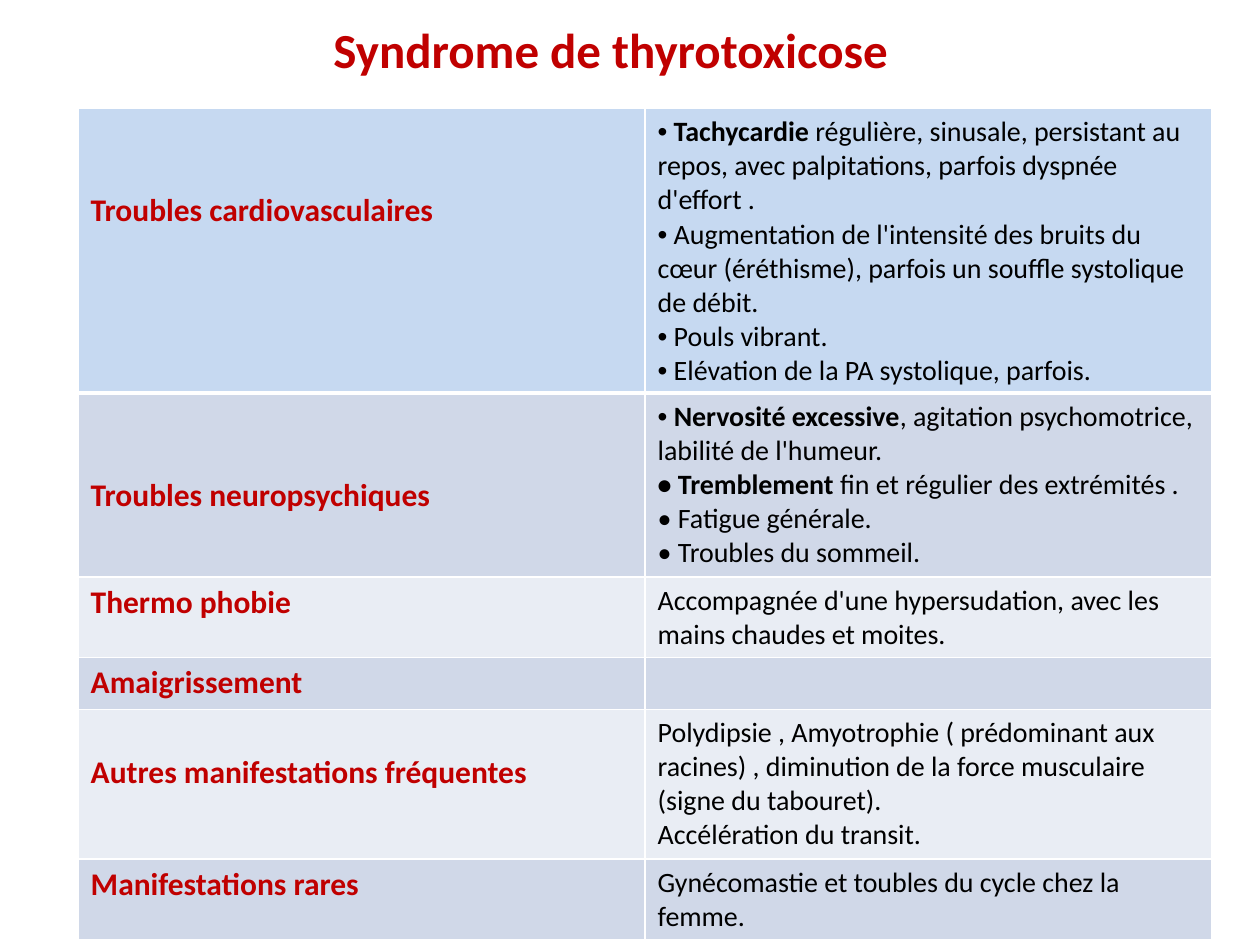
from dataclasses import dataclass

from lxml.etree import SubElement
from pptx import Presentation
from pptx.dml.color import RGBColor
from pptx.enum.text import MSO_ANCHOR, PP_ALIGN
from pptx.oxml.ns import qn
from pptx.util import Inches, Pt

COLORS = {
    "red": "C00000",
    "black": "000000",
    "white": "FFFFFF",
    "header": "C6D9F1",
    "dark_band": "D0D8E8",
    "light_band": "E9EDF4",
}
FONT = "Calibri"
SLIDE_W, SLIDE_H = Inches(10), Inches(7.5)
LABEL_SIZE, DETAIL_SIZE = 18, 16
LABEL_LINE = 0.305  # height of one label line, in inches
MARGIN = 0.05


@dataclass(frozen=True)
class Run:
    text: str
    bold: bool = False


@dataclass(frozen=True)
class Para:
    runs: tuple[Run, ...]
    bullet: bool = False


@dataclass(frozen=True)
class Row:
    label: str
    height: float
    fill: str
    details: tuple[Para, ...] = ()
    lines_above: int = 0


def plain(text: str, bullet: bool = False) -> Para:
    return Para((Run(text),), bullet)


ROWS = (
    Row("Troubles cardiovasculaires", 2.26, "header", (
        Para((Run(" Tachycardie ", True),
              Run("régulière, sinusale, persistant au repos, avec palpitations, "
                  "parfois dyspnée d'effort .")), True),
        plain(" Augmentation de l'intensité des bruits du cœur (éréthisme), "
              "parfois un souffle systolique de débit.", True),
        plain(" Pouls vibrant.", True),
        plain(" Elévation de la PA systolique, parfois.", True),
    ), 2),
    Row("Troubles neuropsychiques", 1.46, "dark_band", (
        Para((Run(" "), Run("Nervosité excessive", True),
              Run(", agitation psychomotrice, labilité de l'humeur.")), True),
        Para((Run("• Tremblement ", True),
              Run("fin et régulier des extrémités ."))),
        plain("• Fatigue générale."),
        plain("• Troubles du sommeil."),
    ), 2),
    Row("Thermo phobie", 0.64, "light_band", (
        plain("Accompagnée d'une hypersudation, avec les mains chaudes et moites."),
    )),
    Row("Amaigrissement", 0.41, "dark_band"),
    Row("Autres manifestations fréquentes", 1.19, "light_band", (
        plain("Polydipsie , Amyotrophie ( prédominant aux racines) , diminution "
              "de la force musculaire (signe du tabouret)."),
        plain("Accélération du transit."),
    ), 1),
    Row("Manifestations rares", 0.64, "dark_band", (
        plain("Gynécomastie et toubles du cycle chez la femme."),
    )),
)


def add_run(p, run: Run, size: float, color: str) -> None:
    r = p.add_run()
    r.text = run.text
    r.font.name = FONT
    r.font.size = Pt(size)
    r.font.bold = run.bold
    r.font.color.rgb = RGBColor.from_string(COLORS[color])


def add_bullet(p) -> None:
    pPr = p._p.get_or_add_pPr()
    pPr.set("marL", "0")
    pPr.set("indent", "0")
    SubElement(pPr, qn("a:buFont")).set("typeface", "Arial")
    SubElement(pPr, qn("a:buChar")).set("char", "•")


def fill_text(tf, paras: tuple[Para, ...], size: float, color: str) -> None:
    for i, para in enumerate(paras):
        p = tf.add_paragraph() if i else tf.paragraphs[0]
        if para.bullet:
            add_bullet(p)
        for run in para.runs:
            add_run(p, run, size, color)


def set_borders(cell, widths: dict[str, float]) -> None:
    """Draw white cell borders; they must precede the fill in tcPr."""
    tcPr = cell._tc.get_or_add_tcPr()
    for i, (side, width) in enumerate(widths.items()):
        ln = tcPr.makeelement(qn(f"a:ln{side}"), {"w": str(Pt(width))})
        solid = SubElement(ln, qn("a:solidFill"))
        SubElement(solid, qn("a:srgbClr")).set("val", COLORS["white"])
        tcPr.insert(i, ln)


def add_title(s, text: str) -> None:
    box = s.shapes.add_textbox(Inches(0.39), 0, int(SLIDE_W * 0.9), Inches(0.78))
    tf = box.text_frame
    tf.word_wrap = True
    tf.vertical_anchor = MSO_ANCHOR.MIDDLE
    p = tf.paragraphs[0]
    p.alignment = PP_ALIGN.CENTER
    add_run(p, Run(text, True), 28, "red")


def add_symptom_table(s, rows: tuple[Row, ...]) -> None:
    height = Inches(sum(row.height for row in rows))
    table = s.shapes.add_table(len(rows), 2, Inches(0.62), Inches(0.86),
                               int(SLIDE_W * 0.9), height).table
    table.first_row = table.horz_banding = False
    for i, row in enumerate(rows):
        table.rows[i].height = Inches(row.height)
        label, detail = table.cell(i, 0), table.cell(i, 1)
        top = 3 if i == 1 else 1
        bottom = 3 if i == 0 else 1
        for cell in (label, detail):
            cell.fill.solid()
            cell.fill.fore_color.rgb = RGBColor.from_string(COLORS[row.fill])
            set_borders(cell, {"L": 1, "R": 1, "T": top, "B": bottom})
        label.margin_top = Inches(MARGIN + row.lines_above * LABEL_LINE)
        fill_text(label.text_frame, (Para((Run(row.label, True),)),),
                  LABEL_SIZE, "red")
        fill_text(detail.text_frame, row.details, DETAIL_SIZE, "black")


def main() -> None:
    prs = Presentation()
    prs.slide_width, prs.slide_height = SLIDE_W, SLIDE_H
    s = prs.slides.add_slide(prs.slide_layouts[6])
    add_title(s, "Syndrome de thyrotoxicose ")
    add_symptom_table(s, ROWS)
    prs.save("out.pptx")


if __name__ == "__main__":
    main()
